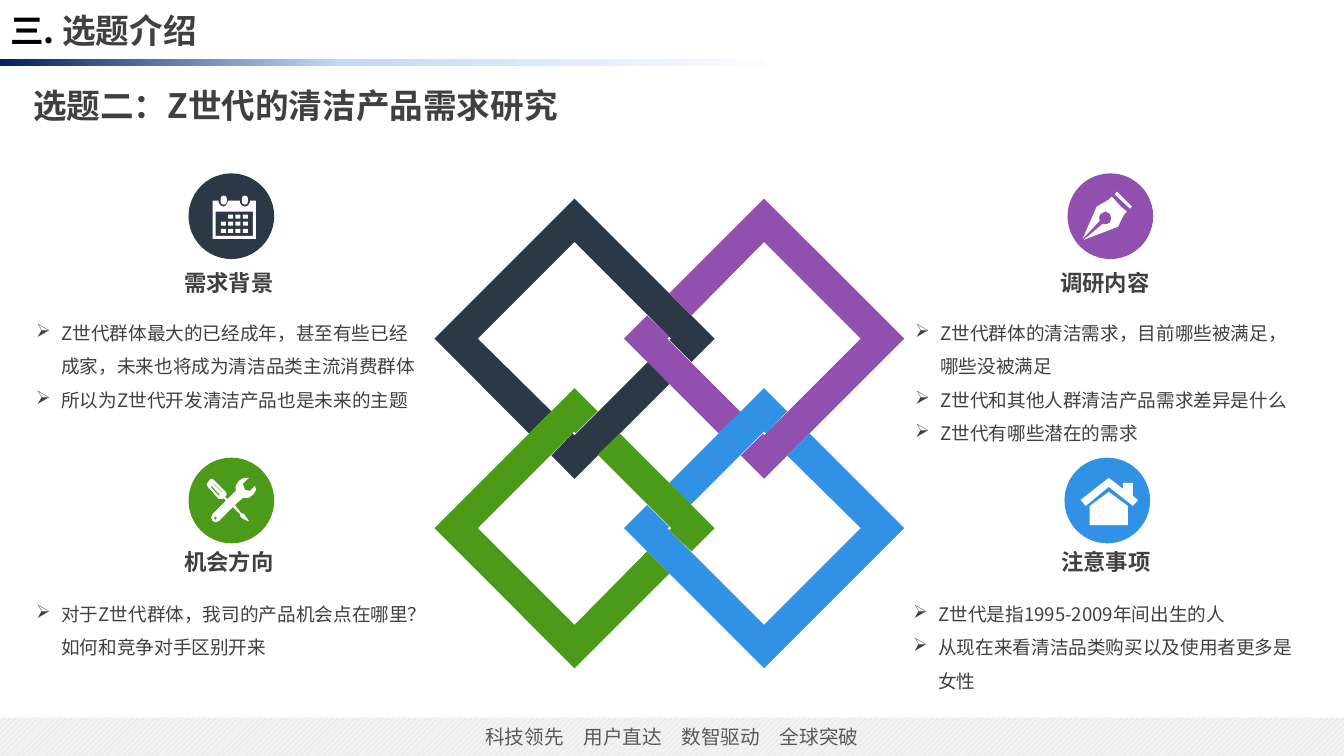
from lxml import etree
from pptx import Presentation
from pptx.dml.color import RGBColor
from pptx.enum.dml import MSO_PATTERN
from pptx.enum.shapes import MSO_SHAPE as SHAPE
from pptx.enum.text import MSO_ANCHOR as ANCHOR, MSO_AUTO_SIZE as AUTO, PP_ALIGN as ALIGN
from pptx.oxml.ns import qn
from pptx.util import Inches, Pt

COLORS = {
    "black": "000000", "text": "404040", "footer": "595959", "white": "FFFFFF",
    "navy": "002060", "sky": "C2D8F8", "stripe": "D9D9D9", "band": "F2F2F2",
    "dark": "2C3846", "purple": "914FAE", "blue": "3191E4", "green": "4C9A19",
}
FONT = "Noto Sans CJK SC"
CELL = 0.1       # inches per grid column and row
COLS, ROWS = 133.33, 75
DISC = 8.5       # diameter of an icon disc, in cells

# Top left link of the chain, in cells from the chain's centre
CHAIN_CENTER = (66.4, 43)
LINK = [
    [(4.5, -9.4), (2.2, -7.1), (0, -9.3), (0.2, -9.4), (-9.4, -19), (-19, -9.4),
     (-11.7, -2.2), (-13.9, 0), (-23.3, -9.4), (-9.4, -23.3)],
    [(-7, -2.2), (-9.4, 0.2), (-9.6, 0), (-11.7, 2.2), (-9.4, 4.5), (0, -4.9), (-2.1, -7.1)],
]

# Icon outlines, in cells from the corner of their disc
NIB = [
    [(5.3, 3.3), (4.4, 2.3), (4.1, 2.6), (2.9, 3.3), (1.5, 6.5), (3.2, 4.7), (3.12, 4.35),
     (3.3, 4), (3.75, 3.77), (4.2, 4), (4.35, 4.45), (4.2, 4.9), (3.85, 5.05), (3.5, 5),
     (1.6, 6.6), (5, 5.3), (5.6, 4.1), (5.9, 3.8)],
    [(4.9, 1.8), (6.4, 3.3), (6.2, 3.5), (4.7, 2.1)],
]
CALENDAR = [
    [(6.7, 2.7), (6.1, 2.7), (6.1, 2.9), (5.9, 3.2), (5.6, 3.3), (5.3, 3.2), (5.1, 2.9),
     (5.1, 2.7), (3.9, 2.7), (3.9, 2.9), (3.7, 3.2), (3.5, 3.3), (3.2, 3.2), (3, 2.9),
     (3, 2.7), (2.4, 2.7), (2.4, 6.5), (6.7, 6.5)],
    [(6.4, 6.2), (2.7, 6.2), (2.7, 3.8), (6.4, 3.8)],
]
HOUSE = [
    [(2.5, 4.8), (2.5, 6.7), (6.3, 6.7), (6.3, 4.8), (4.4, 3.4)],
    [(6.8, 3.8), (6.8, 2.5), (5.8, 2.5), (5.8, 3.1), (4.4, 2), (1.6, 4.2), (2.1, 4.8),
     (4.4, 2.9), (6.8, 4.8), (7.3, 4.2)],
]
TOOLS = [
    [(1.8, 2.6), (2.2, 2.1), (2.4, 2.1), (2.6, 2.3), (3.7, 3.4), (3.8, 3.7), (3.6, 3.9),
     (3.9, 4.1), (4.7, 3.3), (4.67, 2.8), (5, 2.3), (5.4, 2.05), (6, 2), (5.4, 2.6),
     (5.6, 3.2), (6.1, 3.3), (6.6, 2.8), (6.7, 3.2), (6.4, 3.7), (5.95, 4), (5.4, 4),
     (4.6, 4.7), (5.3, 5.6), (5.4, 5.5), (5.6, 5.7), (6, 6.3), (5.9, 6.3), (5.3, 6),
     (5.1, 5.8), (5.2, 5.7), (4.4, 4.9), (3, 6.3), (2.7, 6.4), (2.4, 6.3), (2.25, 5.95),
     (2.4, 5.6), (3.7, 4.3), (3.5, 4), (3.4, 4.1), (3, 4.1), (1.9, 2.9)],
    [(2.7, 5.8), (2.5, 6), (2.7, 6.2), (2.8, 6)],
    [(3.3, 3.4), (3.4, 3.4), (2.5, 2.6), (2.4, 2.6)],
    [(3, 3.8), (3.1, 3.7), (2.3, 2.8), (2.2, 2.9)],
]

# Disc corner, colour, icon, heading and its corner, bullets and their corner
TOPICS = [
    ((18.7, 17.2), "dark", CALENDAR, "需求背景", (17.3, 26.2),
     ["Z世代群体最大的已经成年，甚至有些已经成家，未来也将成为清洁品类主流消费群体",
      "所以为Z世代开发清洁产品也是未来的主题"], (2.6, 30.3)),
    ((105.9, 17.2), "purple", NIB, "调研内容", (104.2, 26.2),
     ["Z世代群体的清洁需求，目前哪些被满足，哪些没被满足",
      "Z世代和其他人群清洁产品需求差异是什么",
      "Z世代有哪些潜在的需求"], (89.8, 30.3)),
    ((105.6, 45.4), "blue", HOUSE, "注意事项", (104.3, 53.9),
     ["Z世代是指1995-2009年间出生的人",
      "从现在来看清洁品类购买以及使用者更多是女性"], (89.6, 58.2)),
    ((18.7, 45.4), "green", TOOLS, "机会方向", (17.3, 53.9),
     ["对于Z世代群体，我司的产品机会点在哪里？如何和竞争对手区别开来"], (2.6, 58.2)),
]


def cells(n):
    return Inches(n * CELL)


def rgb(name):
    return RGBColor.from_string(COLORS[name])


class Deck:
    def __init__(self):
        self.prs = Presentation()
        self.prs.slide_width, self.prs.slide_height = cells(COLS), cells(ROWS)
        self.slide = self.prs.slides.add_slide(self.prs.slide_layouts[5])
        self.shapes = self.slide.shapes

    def style(self, run, size, color, bold=False):
        font = run.font
        font.name, font.size, font.bold = FONT, Pt(size), bold
        font.color.rgb = rgb(color)
        etree.SubElement(run._r.get_or_add_rPr(), qn("a:ea"), typeface=FONT)

    def title(self, parts, x, y, w, h):
        sp = self.shapes.title
        sp.left, sp.top, sp.width, sp.height = map(cells, (x, y, w, h))
        tf = sp.text_frame
        tf.auto_size, tf.vertical_anchor = AUTO.NONE, ANCHOR.MIDDLE
        p = tf.paragraphs[0]
        p.alignment = ALIGN.LEFT
        for text, color in parts:
            r = p.add_run()
            r.text = text
            self.style(r, 24, color, True)

    def shape(self, kind, x, y, w, h, color=None):
        sp = self.shapes.add_shape(kind, *map(cells, (x, y, w, h)))
        sp.shadow.inherit = False
        sp.line.fill.background()
        if color:
            sp.fill.solid()
            sp.fill.fore_color.rgb = rgb(color)
        return sp

    def gradient_bar(self, stops, x, y, w, h):
        fill = self.shape(SHAPE.RECTANGLE, x, y, w, h).fill
        fill.gradient()
        fill.gradient_angle = 0
        gs_list = fill._fill._gradFill.find(qn("a:gsLst"))
        for gs in list(gs_list):
            gs_list.remove(gs)
        for percent, color in stops:
            gs = etree.SubElement(gs_list, qn("a:gs"), pos=str(percent * 1000))
            etree.SubElement(gs, qn("a:srgbClr"), val=COLORS[color])

    def footer(self, text, x, y, w, h):
        sp = self.shape(SHAPE.RECTANGLE, x, y, w, h)
        sp.fill.patterned()
        sp.fill.pattern = MSO_PATTERN.WIDE_UPWARD_DIAGONAL
        sp.fill.fore_color.rgb, sp.fill.back_color.rgb = rgb("stripe"), rgb("band")
        tf = sp.text_frame
        tf.text, tf.vertical_anchor = text, ANCHOR.MIDDLE
        p = tf.paragraphs[0]
        p.alignment = ALIGN.CENTER
        self.style(p.runs[0], 14, "footer")

    def outline(self, contours, origin, color):
        """Draw closed contours, given in cells from origin, as one freeform."""
        contours = [[(cells(origin[0] + x), cells(origin[1] + y)) for x, y in c]
                    for c in contours]
        builder = self.shapes.build_freeform(*contours[0][0])
        for i, contour in enumerate(contours):
            if i:
                builder.move_to(*contour[0])
            builder.add_line_segments(contour[1:], close=True)
        sp = builder.convert_to_shape()
        sp.shadow.inherit = False
        sp.line.fill.background()
        sp.fill.solid()
        sp.fill.fore_color.rgb = rgb(color)

    def text(self, lines, x, y, w, h, size, bold=False, wrap=True, bullets=False):
        tf = self.shapes.add_textbox(*map(cells, (x, y, w, h))).text_frame
        tf.word_wrap = wrap
        for i, line in enumerate(lines):
            p = tf.add_paragraph() if i else tf.paragraphs[0]
            p.text = line
            if bullets:
                p.line_spacing = 1.5
                pPr = p._p.get_or_add_pPr()
                pPr.set("marL", str(cells(2.5)))
                pPr.set("indent", str(-cells(2.5)))
                etree.SubElement(pPr, qn("a:buChar"), char="➢")
            self.style(p.runs[0], size, "text", bold)

    def calendar_details(self, x, y):
        for ring in (3.2, 5.3):
            sp = self.shape(SHAPE.ROUNDED_RECTANGLE, x + ring, y + 2.2, 0.6, 0.9, "white")
            sp.adjustments[0] = 0.5
        for week in range(3):
            for day in range(0 if week else 1, 4):
                self.shape(SHAPE.RECTANGLE, x + 3.2 + 0.73 * day, y + 4.1 + 0.7 * week,
                           0.5, 0.4, "white")

    def chain(self, colors):
        """Draw the interlaced links clockwise, each a quarter turn of the one before."""
        link = LINK
        for color in colors:
            self.outline(link, CHAIN_CENTER, color)
            link = [[(-y, x) for x, y in contour] for contour in link]

    def topic(self, disc, color, icon, heading, heading_at, bullets, bullets_at):
        self.shape(SHAPE.FLOWCHART_CONNECTOR, *disc, DISC, DISC, color)
        self.outline(icon, disc, "white")
        if icon is CALENDAR:
            self.calendar_details(*disc)
        self.text([heading], *heading_at, 11, 3.7, 16, bold=True, wrap=False)
        self.text(bullets, *bullets_at, 40.5, 11.1, 13.3, bullets=True)


def main():
    deck = Deck()
    deck.gradient_bar([(0, "navy"), (43, "sky"), (100, "white")], 0, 5.9, 78.7, 0.7)
    deck.footer("科技领先　用户直达　数智驱动　全球突破", 0, 71.2, COLS, 3.8)
    deck.title([("三. ", "black"), ("选题介绍", "text")], 0, 0, 59.9, 5.9)
    deck.text(["选题二：Z世代的清洁产品需求研究"], 2.3, 7.9, 54.7, 5, 24, bold=True)
    deck.chain(["dark", "purple", "blue", "green"])
    for topic in TOPICS:
        deck.topic(*topic)
    deck.prs.save("out.pptx")


if __name__ == "__main__":
    main()
